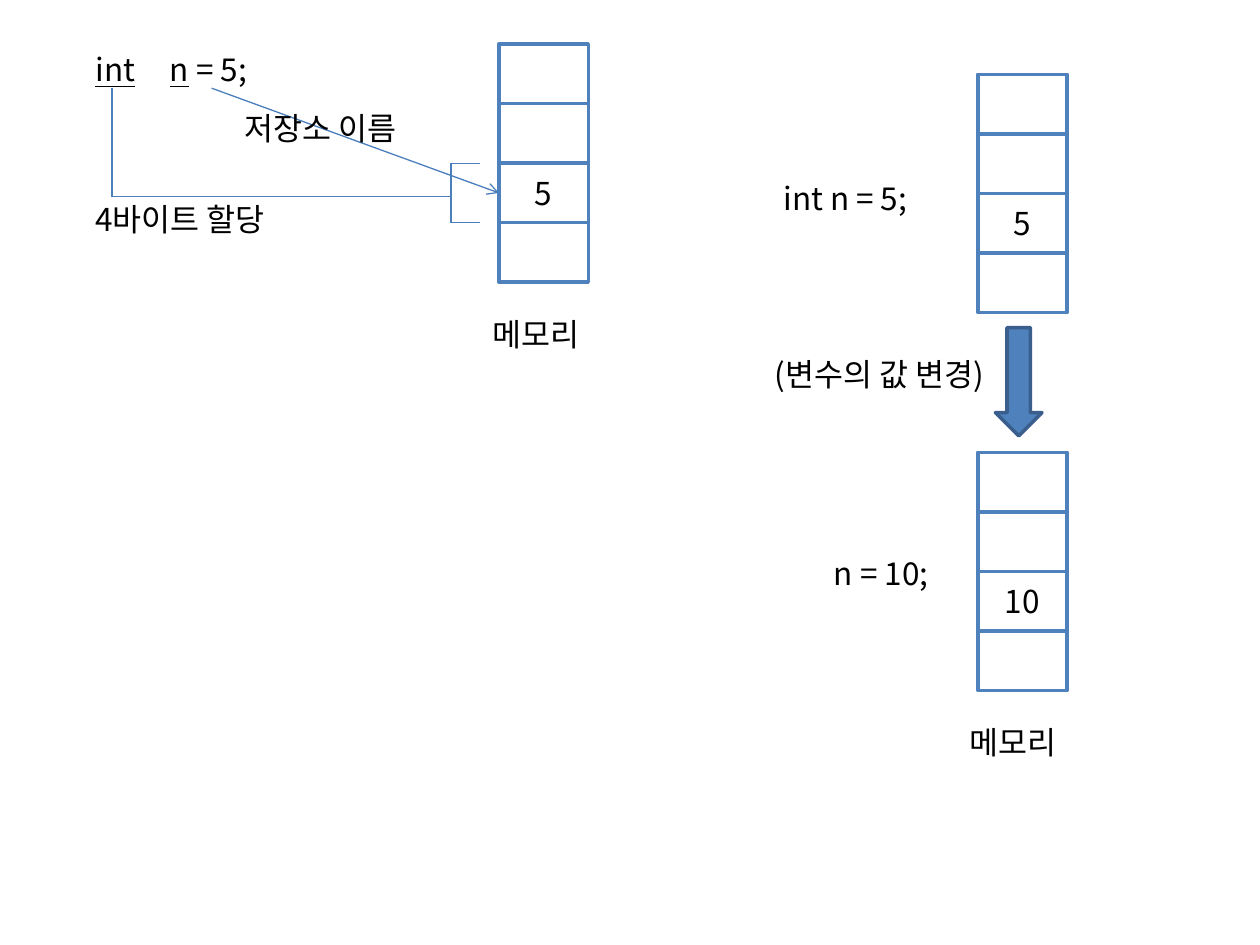
from dataclasses import dataclass

from lxml.etree import SubElement
from pptx import Presentation
from pptx.dml.color import RGBColor
from pptx.enum.shapes import MSO_CONNECTOR, MSO_SHAPE
from pptx.enum.text import MSO_ANCHOR, PP_ALIGN
from pptx.oxml.ns import qn
from pptx.util import Inches, Pt


@dataclass(frozen=True)
class Theme:
    font: str = "Noto Sans CJK KR"
    text_size: float = 18
    text: str = "000000"
    cell_fill: str = "FFFFFF"
    accent: str = "4F81BD"
    arrow_line: str = "3A5F8C"
    connector: str = "4B7EBC"
    outline_width: float = 2
    connector_width: float = 0.75


THEME = Theme()
CELL_WIDTH, CELL_HEIGHT = 0.71, 0.4725
CELL_COUNT, VALUE_ROW = 4, 2
LABEL_HEIGHT = 0.4


def add_run(paragraph, text, underline=False):
    run = paragraph.add_run()
    run.text = text
    font = run.font
    font.name = THEME.font
    font.size = Pt(THEME.text_size)
    font.color.rgb = RGBColor.from_string(THEME.text)
    font.underline = underline
    SubElement(font._element, qn("a:ea"), typeface=THEME.font)


def add_label(shapes, left, top, width, *runs):
    """Each run is a pair of text and whether it is underlined."""
    box = shapes.add_textbox(Inches(left), Inches(top), Inches(width), Inches(LABEL_HEIGHT))
    box.text_frame.word_wrap = True
    paragraph = box.text_frame.paragraphs[0]
    for text, underline in runs:
        add_run(paragraph, text, underline)
    return paragraph


def add_tab_stop(paragraph, position):
    tabs = SubElement(paragraph._p.get_or_add_pPr(), qn("a:tabLst"))
    SubElement(tabs, qn("a:tab"), pos=str(Inches(position)), algn="l")


def add_box(shapes, kind, left, top, width, height, fill, line):
    shape = shapes.add_shape(kind, Inches(left), Inches(top), Inches(width), Inches(height))
    shape.shadow.inherit = False
    shape.fill.solid()
    shape.fill.fore_color.rgb = RGBColor.from_string(fill)
    shape.line.color.rgb = RGBColor.from_string(line)
    shape.line.width = Pt(THEME.outline_width)
    return shape


def add_line(shapes, start, end, arrow=False):
    points = [Inches(value) for value in (*start, *end)]
    connector = shapes.add_connector(MSO_CONNECTOR.STRAIGHT, *points)
    connector.line.color.rgb = RGBColor.from_string(THEME.connector)
    connector.line.width = Pt(THEME.connector_width)
    if arrow:
        SubElement(connector.line._get_or_add_ln(), qn("a:tailEnd"), type="arrow")
    SubElement(connector._element.spPr, qn("a:effectLst"))


def add_memory(shapes, left, top, value):
    """Stack of memory cells, one of which holds the value."""
    for row in range(CELL_COUNT):
        cell = add_box(shapes, MSO_SHAPE.RECTANGLE, left, top + row * CELL_HEIGHT,
                       CELL_WIDTH, CELL_HEIGHT, THEME.cell_fill, THEME.accent)
        if row == VALUE_ROW:
            cell.text_frame.vertical_anchor = MSO_ANCHOR.MIDDLE
            paragraph = cell.text_frame.paragraphs[0]
            paragraph.alignment = PP_ALIGN.CENTER
            add_run(paragraph, value)


def add_declaration(slide, left, top):
    """How a declaration reserves and names a place in memory."""
    shapes = slide.shapes.add_group_shape().shapes
    memory_left = left + 3.3
    code = add_label(shapes, left, top, 2.44,
                     ("int", True), ("\t", False), ("n", True), (" = 5;", False))
    add_tab_stop(code, 0.59)
    add_label(shapes, left, top + 1.19, 2.44, ("4바이트 할당", False))
    add_memory(shapes, memory_left, top, "5")
    add_label(shapes, left + 3.15, top + 2.1, 1.34, ("메모리", False))

    code_bottom, allocation = top + 0.35, top + 1.21
    type_x, bracket_left, bracket_right = left + 0.23, left + 2.92, left + 3.15
    value_top = top + VALUE_ROW * CELL_HEIGHT
    value_bottom = value_top + CELL_HEIGHT
    add_line(shapes, (type_x, code_bottom), (type_x, allocation))
    add_line(shapes, (type_x, allocation), (bracket_left, allocation))
    for edge in (value_top, value_bottom):
        add_line(shapes, (bracket_left, edge), (bracket_right, edge))
    add_line(shapes, (bracket_left, value_top), (bracket_left, value_bottom))
    add_line(shapes, (left + 1.02, code_bottom),
             (memory_left, value_top + CELL_HEIGHT / 2), arrow=True)
    add_label(shapes, left + 1.18, top + 0.47, 1.64, ("저장소 이름", False))


def add_value_change(slide, left, top):
    """Memory before and after a new value is assigned."""
    shapes = slide.shapes.add_group_shape().shapes
    memory_left = left + 1.71
    add_label(shapes, left + 0.07, top + 0.78, 1.4, ("int n = 5;", False))
    add_memory(shapes, memory_left, top, "5")
    add_memory(shapes, memory_left, top + 3, "10")
    add_label(shapes, left + 1.55, top + 5.1, 1.34, ("메모리", False))
    add_label(shapes, left + 0.47, top + 3.76, 1.34, ("n = 10;", False))
    add_label(shapes, left, top + 2.18, 2.15, ("(변수의 값 변경)", False))
    add_box(shapes, MSO_SHAPE.DOWN_ARROW, left + 1.85, top + 2.01, 0.37, 0.86,
            THEME.accent, THEME.arrow_line)


def main():
    presentation = Presentation()
    presentation.slide_width = Inches(10)
    presentation.slide_height = Inches(7.5)
    slide = presentation.slides.add_slide(presentation.slide_layouts[6])
    add_declaration(slide, 0.66, 0.35)
    add_value_change(slide, 6.05, 0.59)
    presentation.save("out.pptx")


if __name__ == "__main__":
    main()
